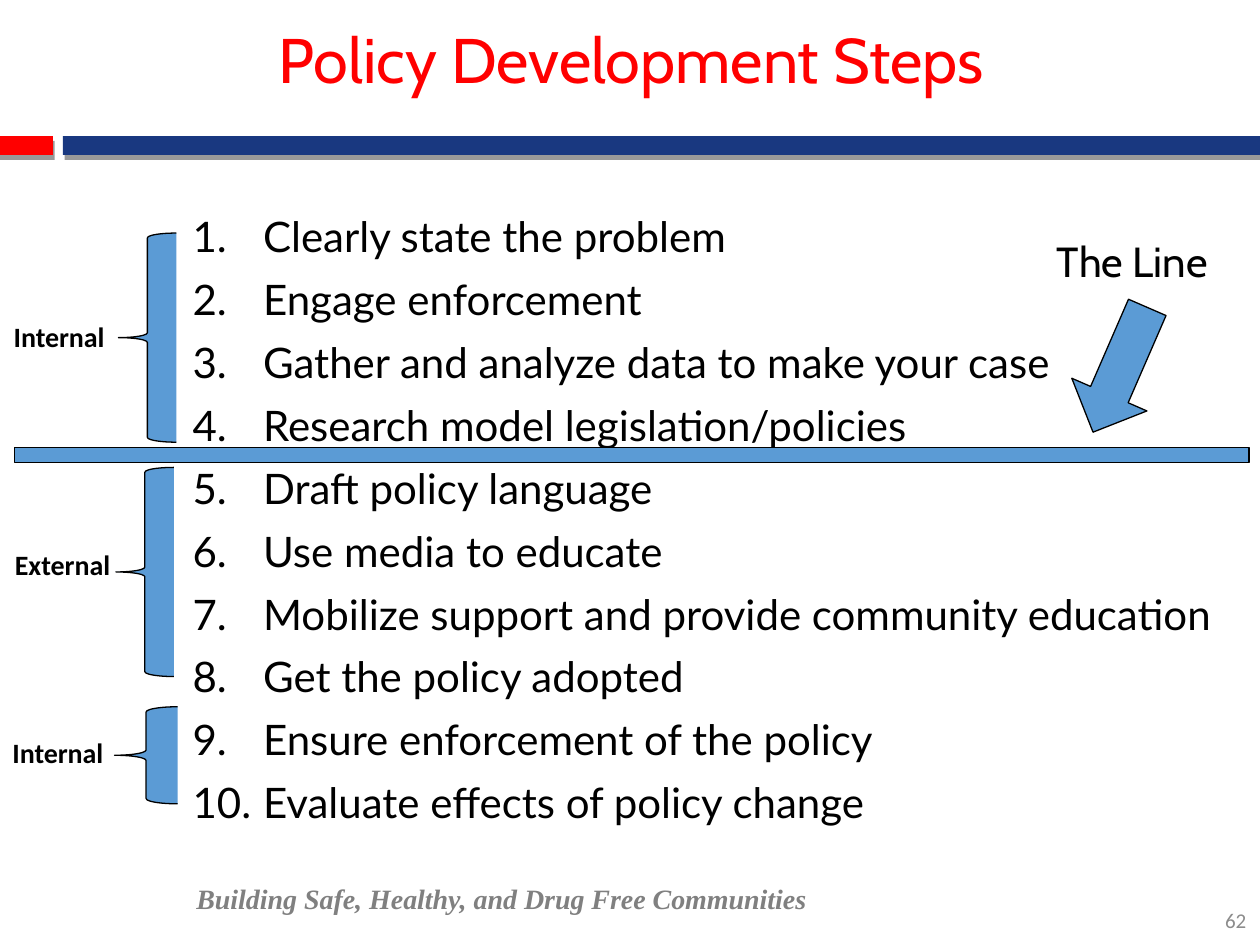
"""Build the Policy Development Steps slide."""
from lxml import etree
from pptx import Presentation
from pptx.dml.color import RGBColor
from pptx.enum import shapes, text
from pptx.oxml.ns import qn
from pptx.util import Inches, Pt

RED = RGBColor(0xFF, 0x00, 0x00)
NAVY = RGBColor(0x19, 0x38, 0x80)
SKY = RGBColor(0x5B, 0x9B, 0xD5)
BLACK = RGBColor(0x00, 0x00, 0x00)
WHITE = RGBColor(0xFF, 0xFF, 0xFF)
GRAY = RGBColor(0x80, 0x80, 0x80)
LIGHT_GRAY = RGBColor(0x8C, 0x8C, 0x8C)

SHAPE = shapes.MSO_SHAPE
ALIGN = text.PP_ALIGN
ANCHOR = text.MSO_ANCHOR

STEPS = [
    "Clearly state the problem",
    "Engage enforcement",
    "Gather and analyze data to make your case",
    "Research model legislation/policies",
    "Draft policy language",
    "Use media to educate",
    "Mobilize support and provide community education",
    "Get the policy adopted",
    "Ensure enforcement of the policy",
    "Evaluate effects of policy change",
]
GROUPS = [
    ("Internal", (0.01, 2.49), (0.94, 1.85, 0.46, 1.66)),
    ("External", (0.02, 4.3), (0.92, 3.71, 0.46, 1.66)),
    ("Internal", (0, 5.79), (0.91, 5.61, 0.5, 0.77)),
]


def add_preset(slide, kind, box, fill, rotation=0, outlined=False):
    shape = slide.shapes.add_shape(kind, *map(Inches, box))
    shape.rotation = rotation
    shape.shadow.inherit = False
    shape.fill.solid()
    shape.fill.fore_color.rgb = fill
    if outlined:
        shape.line.color.rgb = BLACK
        shape.line.width = Pt(0.75)
    else:
        shape.line.fill.background()
    return shape


def add_bar(slide, box, fill):
    bar = add_preset(slide, SHAPE.RECTANGLE, box, fill)
    effects = bar.element.spPr.find(qn("a:effectLst"))
    shadow = etree.SubElement(effects, qn("a:outerShdw"), blurRad="0",
                              dist=str(Pt(3)), dir=str(70 * 60000), rotWithShape="0")
    color = etree.SubElement(shadow, qn("a:srgbClr"), val=str(BLACK))
    etree.SubElement(color, qn("a:alpha"), val="40000")


def number_paragraph(paragraph):
    properties = paragraph._p.get_or_add_pPr()
    properties.set("marL", str(Inches(0.56)))
    properties.set("indent", str(-Inches(0.56)))
    etree.SubElement(properties, qn("a:buFont"), typeface="+mj-lt")
    etree.SubElement(properties, qn("a:buAutoNum"), type="arabicPeriod")


def add_text(slide, box, content, *, size, font, color=BLACK, bold=False, italic=False,
             align=ALIGN.LEFT, anchor=ANCHOR.TOP, wrap=True, numbered=False,
             line_spacing=None, gap=0):
    frame = slide.shapes.add_textbox(*map(Inches, box)).text_frame
    frame.word_wrap = wrap
    frame.vertical_anchor = anchor
    frame.text = content
    for index, paragraph in enumerate(frame.paragraphs):
        if numbered:
            number_paragraph(paragraph)
        paragraph.alignment = align
        if line_spacing:
            paragraph.line_spacing = line_spacing
        if index:
            paragraph.space_before = Pt(gap)
        for run in paragraph.runs:
            run.font.size = Pt(size)
            run.font.name = font
            run.font.bold = bold
            run.font.italic = italic
            run.font.color.rgb = color


def add_group(slide, label, position, brace):
    add_preset(slide, SHAPE.LEFT_BRACE, brace, SKY, outlined=True)
    add_text(slide, (*position, 1.1, 0.37), label, size=16, font="Calibri", bold=True)


def main():
    presentation = Presentation()
    presentation.slide_width, presentation.slide_height = Inches(10), Inches(7.5)
    slide = presentation.slides.add_slide(presentation.slide_layouts[6])
    slide.background.fill.solid()
    slide.background.fill.fore_color.rgb = WHITE

    add_bar(slide, (0.5, 1.08, 9.67, 0.15), NAVY)
    add_bar(slide, (-0.08, 1.08, 0.5, 0.15), RED)
    add_text(slide, (9.37, 7.1, 0.62, 0.4), "62", size=12, font="Calibri",
             color=LIGHT_GRAY, align=ALIGN.RIGHT, anchor=ANCHOR.MIDDLE)
    add_text(slide, (1.46, 6.95, 5.11, 0.37),
             "Building Safe, Healthy, and Drug Free Communities", size=16,
             font="Times New Roman", color=GRAY, bold=True, italic=True, wrap=False)

    add_text(slide, (1.43, 1.67, 8.35, 4.92), "\n".join(STEPS), size=24, font="Lato",
             numbered=True, line_spacing=0.9, gap=10)
    add_text(slide, (0.01, 0.17, 10, 0.67), "Policy Development Steps", size=36,
             font="Cabin", color=RED, align=ALIGN.CENTER, anchor=ANCHOR.MIDDLE,
             line_spacing=0.9)

    add_preset(slide, SHAPE.MATH_MINUS, (-1.65, 3.36, 13.33, 0.5), SKY, outlined=True)
    add_text(slide, (8.29, 1.82, 1.5, 0.5), "The Line", size=24, font="Cabin")
    add_preset(slide, SHAPE.RIGHT_ARROW, (8.35, 2.61, 1.08, 0.65), SKY,
               rotation=113.5, outlined=True)
    for group in GROUPS:
        add_group(slide, *group)

    presentation.save("out.pptx")


if __name__ == "__main__":
    main()
